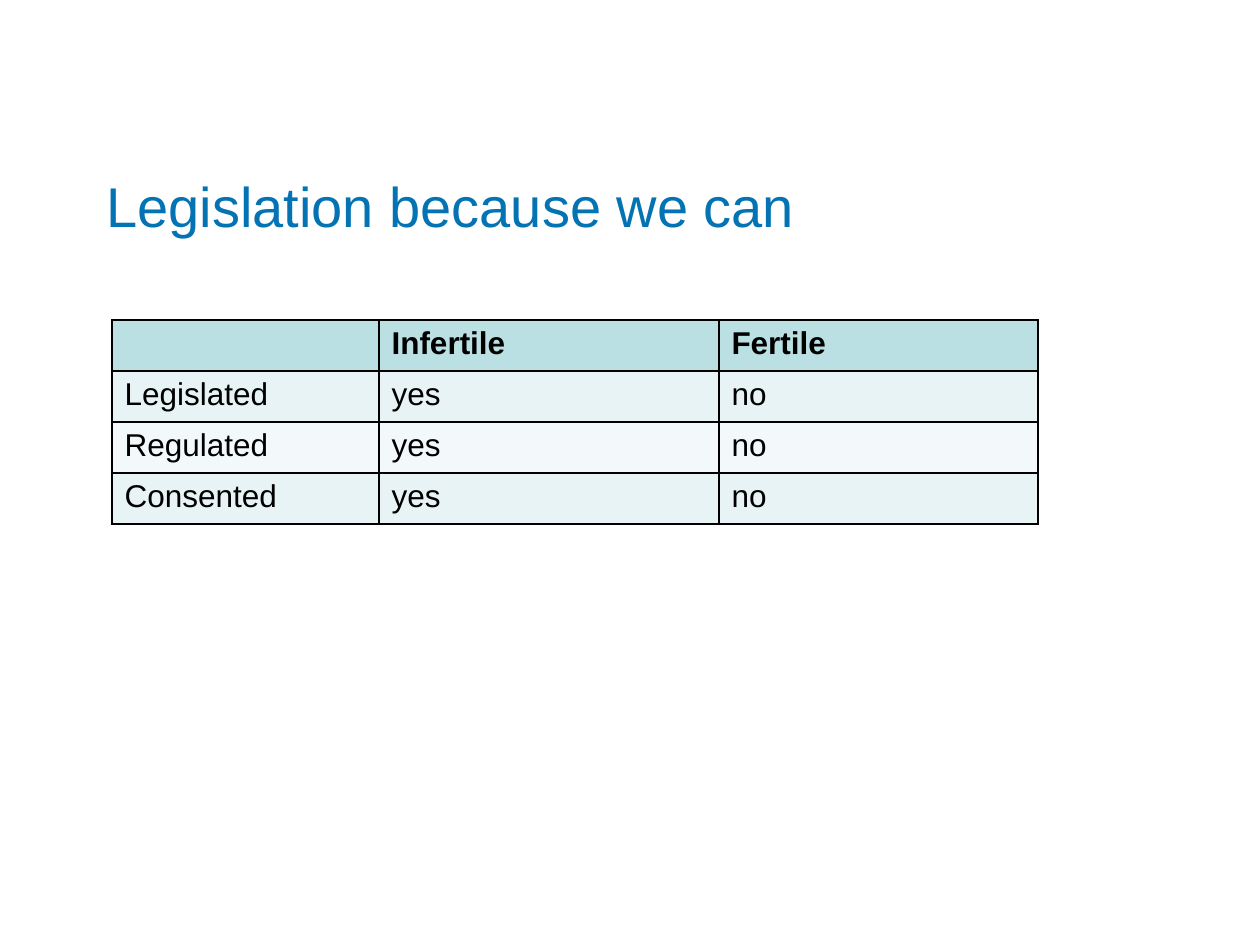
"""Build a slide with a title and a bordered table on legislation and fertility."""
from dataclasses import dataclass

from lxml import etree
from pptx import Presentation
from pptx import util as u
from pptx.dml.color import RGBColor
from pptx.enum import text
from pptx.oxml.ns import qn

PX_PER_INCH = 126
COLORS = {
    "title": "0373B3",
    "ink": "000000",
    "header": "BBE0E3",
    "odd": "E7F3F4",
    "even": "F3F9FA",
}
TITLE_FORMAT = {"name": "Arial", "size": u.Pt(32), "bold": False}
BODY_FORMAT = {"name": "Arial", "size": u.Pt(18), "bold": False}
HEADER_FORMAT = {**BODY_FORMAT, "bold": True}
COLUMN_WIDTHS = (267, 340, 319)
ROW_HEIGHT = 51


@dataclass(frozen=True)
class Row:
    cells: tuple[str, ...]
    fill: str
    style: dict


ROWS = (
    Row(("", "Infertile", "Fertile"), "header", HEADER_FORMAT),
    Row(("Legislated", "yes", "no"), "odd", BODY_FORMAT),
    Row(("Regulated", "yes", "no"), "even", BODY_FORMAT),
    Row(("Consented", "yes", "no"), "odd", BODY_FORMAT),
)


def px(length: int) -> u.Emu:
    return u.Emu(round(length * u.Inches(1) / PX_PER_INCH))


def write(para, words: str, style: dict, color: str) -> None:
    para.text = words
    for name, value in style.items():
        setattr(para.font, name, value)
    para.font.color.rgb = RGBColor.from_string(COLORS[color])


def add_borders(cell) -> None:
    properties = cell._tc.get_or_add_tcPr()
    for position, side in enumerate(("lnL", "lnR", "lnT", "lnB")):
        line = etree.Element(qn(f"a:{side}"), w=str(u.Pt(1)))
        fill = etree.SubElement(line, qn("a:solidFill"))
        etree.SubElement(fill, qn("a:srgbClr"), val=COLORS["ink"])
        properties.insert(position, line)


def add_title(page, words: str) -> None:
    box = page.shapes.add_textbox(px(94), px(141), px(1071), px(129))
    frame = box.text_frame
    frame.word_wrap = True
    frame.vertical_anchor = text.MSO_ANCHOR.MIDDLE
    write(frame.paragraphs[0], words, TITLE_FORMAT, "title")


def add_grid(page, rows: tuple[Row, ...]) -> None:
    table = page.shapes.add_table(
        len(rows), len(COLUMN_WIDTHS), px(112), px(320),
        px(sum(COLUMN_WIDTHS)), px(ROW_HEIGHT * len(rows)),
    ).table
    for column, width in zip(table.columns, COLUMN_WIDTHS):
        column.width = px(width)
    for line, row in zip(table.rows, rows):
        line.height = px(ROW_HEIGHT)
        for cell, words in zip(line.cells, row.cells):
            cell.fill.solid()
            cell.fill.fore_color.rgb = RGBColor.from_string(COLORS[row.fill])
            write(cell.text_frame.paragraphs[0], words, row.style, "ink")
            add_borders(cell)


def main() -> None:
    deck = Presentation()
    deck.slide_width, deck.slide_height = px(1260), px(945)
    page = deck.slides.add_slide(deck.slide_layouts[6])
    add_title(page, "Legislation because we can")
    add_grid(page, ROWS)
    deck.save("out.pptx")


if __name__ == "__main__":
    main()
